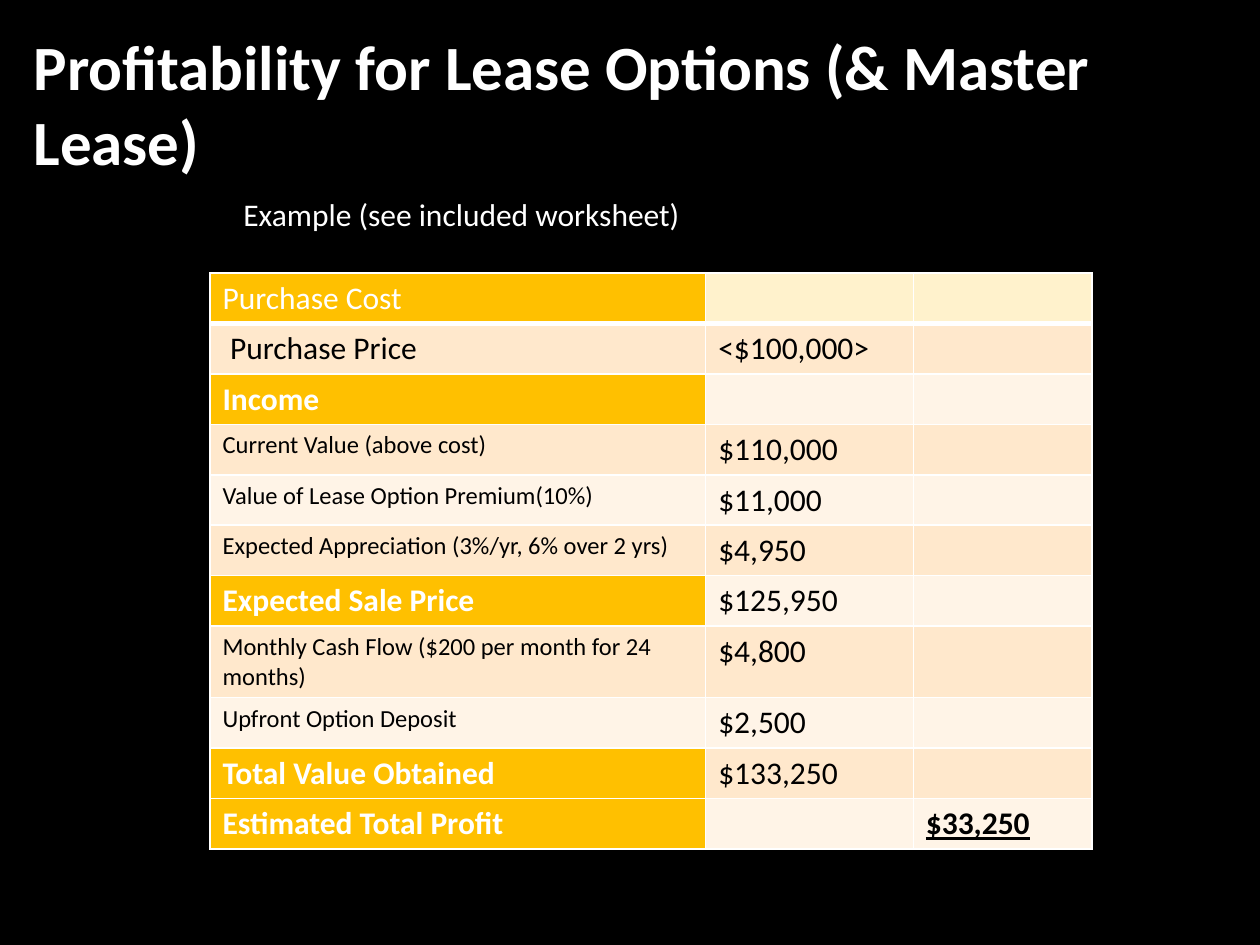
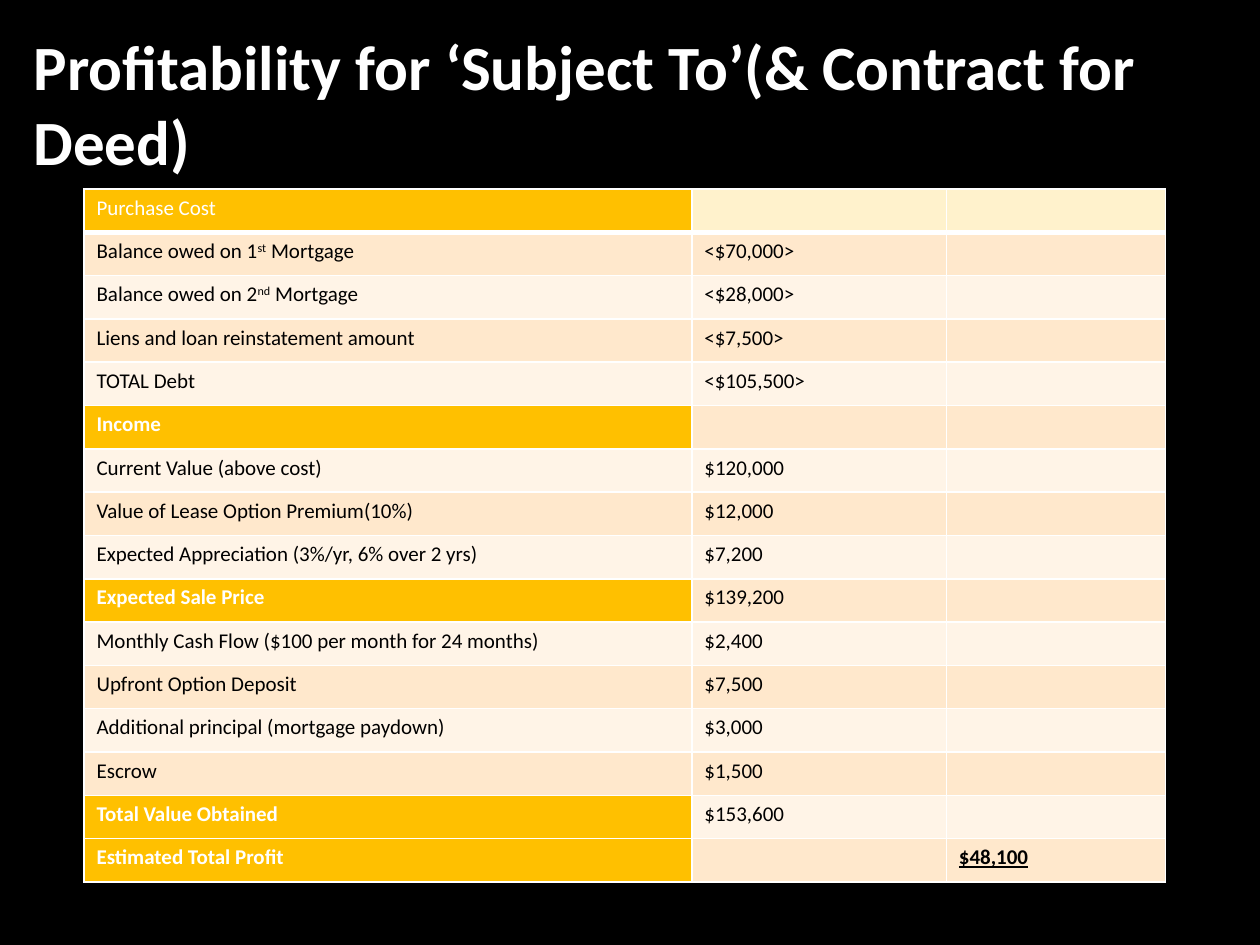
from lxml import etree
from pptx import Presentation
from pptx.dml.color import RGBColor
from pptx.enum.text import MSO_ANCHOR, MSO_AUTO_SIZE, PP_ALIGN
from pptx.oxml.ns import qn
from pptx.util import Inches, Pt

LEFT = PP_ALIGN.LEFT
TOP = MSO_ANCHOR.TOP
FIXED = MSO_AUTO_SIZE.NONE
GROW = MSO_AUTO_SIZE.SHAPE_TO_FIT_TEXT

WIDTH, HEIGHT = Inches(10), Inches(7.5)
COLUMNS, ROWS = 60, 45
FONT = "Calibri"
WHITE, BLACK, GOLD = "FFFFFF", "000000", "FFC000"
HEADER_TINT = "FFF2CC"
BANDS = ("FFF4E7", "FFE8CC")
COLUMN_WEIGHTS = (39.4, 16.5, 14.2)
SECTIONS = ("Purchase Cost", "Income", "Expected Sale Price",
            "Total Value Obtained", "Estimated Total Profit")

LEASE_OPTION = [
    ("Purchase Cost",),
    ("Purchase Price", "<$100,000>"),
    ("Income",),
    ("Current Value (above cost)", "$110,000"),
    ("Value of Lease Option Premium(10%)", "$11,000"),
    ("Expected Appreciation (3%/yr, 6% over 2 yrs)", "$4,950"),
    ("Expected Sale Price", "$125,950"),
    ("Monthly Cash Flow ($200 per month for 24 months)", "$4,800"),
    ("Upfront Option Deposit", "$2,500"),
    ("Total Value Obtained", "$133,250"),
    ("Estimated Total Profit", "", "$33,250"),
]
SUBJECT_TO = [
    ("Purchase Cost",),
    ("Balance owed on 1^st^ Mortgage", "<$70,000>"),
    ("Balance owed on 2^nd^ Mortgage", "<$28,000>"),
    ("Liens and loan reinstatement amount", "<$7,500>"),
    ("TOTAL Debt", "<$105,500>"),
    ("Income",),
    ("Current Value (above cost)", "$120,000"),
    ("Value of Lease Option Premium(10%)", "$12,000"),
    ("Expected Appreciation (3%/yr, 6% over 2 yrs)", "$7,200"),
    ("Expected Sale Price", "$139,200"),
    ("Monthly Cash Flow ($100 per month for 24 months)", "$2,400"),
    ("Upfront Option Deposit", "$7,500"),
    ("Additional principal (mortgage paydown)", "$3,000"),
    ("Escrow", "$1,500"),
    ("Total Value Obtained", "$153,600"),
    ("Estimated Total Profit", "", "$48,100"),
]


def color(value):
    return RGBColor.from_string(value)


def apply(target, values):
    for name, value in values.items():
        setattr(target, name, value)


def across(columns):
    return int(WIDTH * columns / COLUMNS)


def down(rows):
    return int(HEIGHT * rows / ROWS)


class Deck:
    def __init__(self):
        self.prs = Presentation()
        apply(self.prs, {"slide_width": WIDTH, "slide_height": HEIGHT})
        self.paint(self.prs.slide_master.background.fill, BLACK)
        self.slide = None

    def paint(self, fill, value):
        fill.solid()
        fill.fore_color.rgb = color(value)

    def add_text(self, paragraph, text, size, ink=WHITE, **extra):
        for position, part in enumerate(text.split("^")):
            run = paragraph.add_run()
            run.text = part
            apply(run.font, {"name": FONT, "size": Pt(size), "bold": False, **extra})
            run.font.color.rgb = color(ink)
            if position % 2:
                run._r.get_or_add_rPr().set("baseline", "30000")

    def start(self, heading):
        self.slide = self.prs.slides.add_slide(self.prs.slide_layouts[5])
        title = self.slide.shapes.title
        apply(title, {"left": across(1), "top": down(1),
                      "width": across(59), "height": down(7.8)})
        apply(title.text_frame, {"auto_size": FIXED, "word_wrap": True,
                                 "vertical_anchor": TOP})
        paragraph = title.text_frame.paragraphs[0]
        paragraph.alignment = LEFT
        self.add_text(paragraph, heading, 36, bold=True)

    def caption(self, text, column, row, width, height):
        box = self.slide.shapes.add_textbox(
            across(column), down(row), across(width), down(height))
        apply(box.text_frame, {"word_wrap": False, "auto_size": GROW})
        self.add_text(box.text_frame.paragraphs[0], text, 18)

    def borders(self, cell, bottom):
        properties = cell._tc.get_or_add_tcPr()
        for position, (side, points) in enumerate(
                (("L", 1), ("R", 1), ("T", 1), ("B", bottom))):
            line = etree.Element(qn(f"a:ln{side}"), w=str(Pt(points)))
            fill = etree.SubElement(line, qn("a:solidFill"))
            etree.SubElement(fill, qn("a:srgbClr"), val=WHITE)
            properties.insert(position, line)

    def cell_text(self, cell, text, size, **style):
        paragraph = cell.text_frame.paragraphs[0]
        if text:
            self.add_text(paragraph, text, size, **style)
        else:
            etree.SubElement(paragraph._p, qn("a:endParaRPr"), sz=str(size * 100))

    def worksheet(self, entries, column, row, width, row_height, size,
                  detail_size, indented=()):
        table = self.slide.shapes.add_table(
            len(entries), len(COLUMN_WEIGHTS), across(column), down(row),
            across(width), down(row_height * len(entries))).table
        apply(table, {"first_row": False, "horz_banding": False})
        for table_column, weight in zip(table.columns, COLUMN_WEIGHTS):
            table_column.width = int(across(width) * weight / sum(COLUMN_WEIGHTS))
        for index, entry in enumerate(entries):
            label, amount, profit = (*entry, "", "")[:3]
            section = label in SECTIONS
            band = BANDS[index % 2] if index else HEADER_TINT
            label_style = {"ink": BLACK}
            if section:
                label_style = {"ink": WHITE, "bold": index > 0}
            large = section or label in indented
            cells = (
                (label, size if large else detail_size, label_style),
                (amount, size, {"ink": BLACK}),
                (profit, size, {"ink": BLACK, "bold": True, "underline": True}),
            )
            for place, (text, points, style) in enumerate(cells):
                cell = table.cell(index, place)
                self.paint(cell.fill, GOLD if section and place == 0 else band)
                self.borders(cell, 1 if index else 3)
                self.cell_text(cell, text, points, **style)
            if label in indented:
                table.cell(index, 0).margin_left = Inches(0.16)


def main():
    deck = Deck()
    deck.start("Profitability for Lease Options (& Master Lease)")
    deck.caption("Example (see included worksheet)", 11, 9, 26.5, 2.4)
    deck.worksheet(LEASE_OPTION, 10, 13, 42, 2.4, 18, 14,
                   indented=("Purchase Price",))
    deck.start("Profitability for ‘Subject To’(& Contract for Deed)")
    deck.worksheet(SUBJECT_TO, 4, 9, 51.5, 33 / len(SUBJECT_TO), 12, 12)
    deck.prs.save("out.pptx")


if __name__ == "__main__":
    main()
